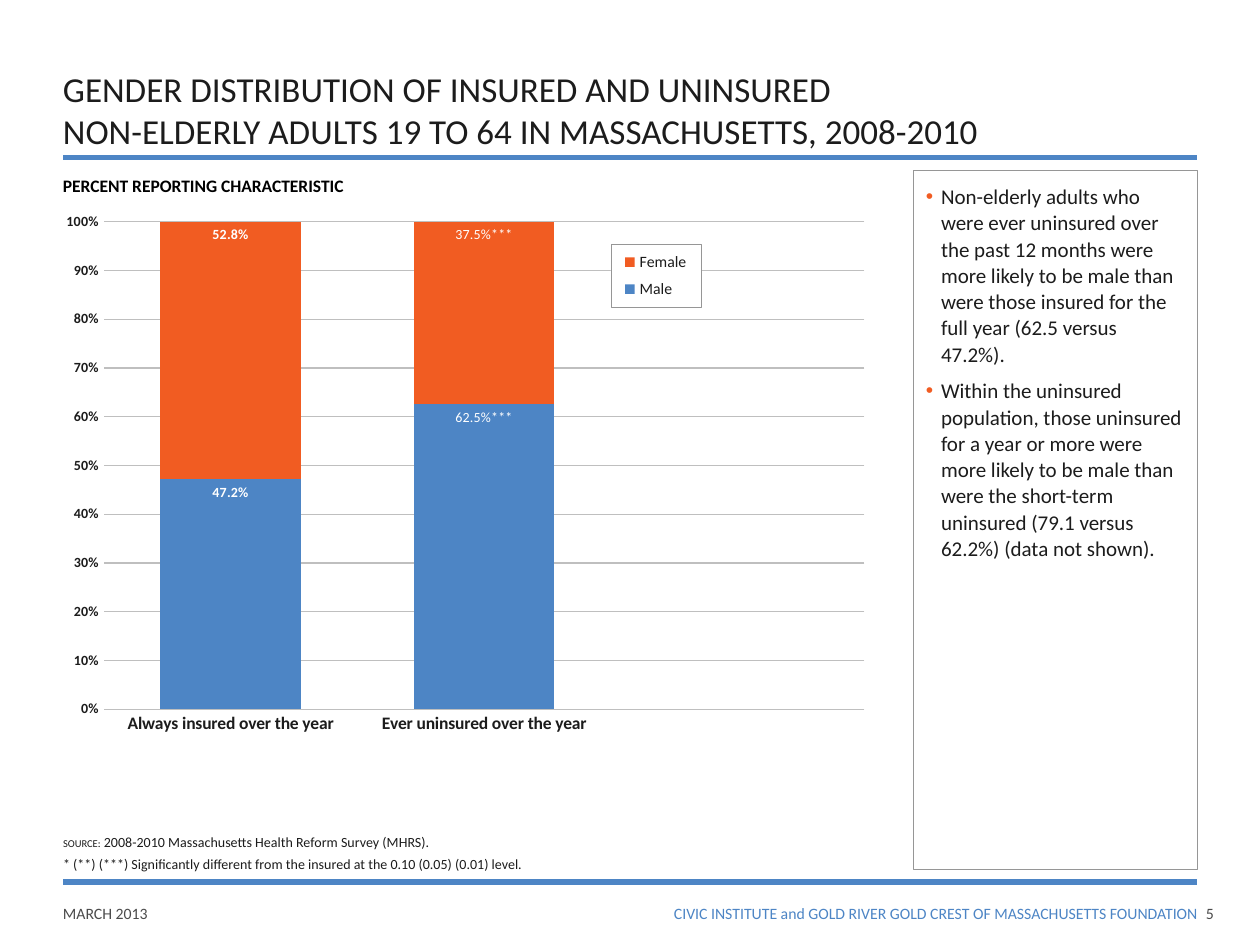
from lxml.etree import SubElement
from pptx import Presentation
from pptx.chart.data import CategoryChartData
from pptx.dml.color import RGBColor
from pptx.enum.chart import (XL_CHART_TYPE as ChartType, XL_LABEL_POSITION as LabelPosition,
                             XL_LEGEND_POSITION as LegendPosition, XL_TICK_MARK as TickMark)
from pptx.enum.shapes import MSO_CONNECTOR as Connector, MSO_SHAPE as Preset
from pptx.enum.text import MSO_ANCHOR as Anchor, PP_ALIGN as Align
from pptx.oxml import parse_xml
from pptx.oxml.ns import nsdecls, qn
from pptx.util import Pt

PX = 9144  # EMU per px, 100 px to the inch
FONT = "Calibri"
BLUE, ORANGE, INK, GREY, EDGE, GRID = "4D85C5", "F15C22", "1C1C1C", "4B4B4B", "969696", "BFBFBF"
BLACK, WHITE = "000000", "FFFFFF"

RULE_TOPS = [125, 700]
RULE_LEFT, RULE_RIGHT = 50, 950

# Each paragraph is a list of runs: (text, size, colour)
TEXTS = [
    dict(at=(50, 717, 100, 32), paras=[[("MARCH 2013", 9, GREY)]]),
    dict(at=(519, 717, 431, 32), align=Align.RIGHT,
         paras=[[("CIVIC INSTITUTE and GOLD RIVER GOLD CREST OF MASSACHUSETTS FOUNDATION", 9, BLUE)]]),
    dict(at=(957, 717, 43, 32), paras=[[("5", 9, GREY)]]),
    dict(at=(50, 38, 900, 87), margins=(0, 5, 0, 5), anchor=Anchor.BOTTOM,
         paras=[[("GENDER DISTRIBUTION OF INSURED AND UNINSURED\n"
                  "NON-ELDERLY ADULTS 19 TO 64 IN MASSACHUSETTS, 2008-2010", 20, INK)]]),
    dict(at=(50, 656, 648, 41), margins=(0, 5, 0, 5), anchor=Anchor.BOTTOM, before=3,
         paras=[[("SOURCE", 6, INK), (":", 6, BLACK), (" ", 8, BLACK),
                 ("2008-2010 Massachusetts Health Reform Survey (MHRS).", 8, INK)],
                [("* (**) (***) Significantly different from the insured at the "
                  "0.10 (0.05) (0.01) level.", 8, INK)]]),
    dict(at=(50, 134, 490, 27), margins=(0, 5, 0, 5), bold=True,
         paras=[[("PERCENT REPORTING CHARACTERISTIC", 10, BLACK)]]),
]

FINDINGS_AT = (725, 135, 225, 555)
FINDINGS = [
    "Non-elderly adults who were ever uninsured over the past 12 months were more likely "
    "to be male than were those insured for the full year (62.5 versus 47.2%).",
    "Within the uninsured population, those uninsured for a year or more were more likely "
    "to be male than were the short-term uninsured (79.1 versus 62.2%) (data not shown).",
]

CHART_AT = (50, 158, 649, 450)
CATEGORIES = ["Always insured over the year", "Ever uninsured over the year", ""]
# name, colour, values, label of the second bar
SERIES = [
    ("Male", BLUE, [0.472, 0.625, None], "62.5%***"),
    ("Female", ORANGE, [0.528, 0.375, None], "37.5%***"),
]
PLOT_LAYOUT = (0.05, 0.04, 0.93, 0.86)
LEGEND_LAYOUT = (0.67, 0.08, 0.11, 0.11)


def rgb(colour):
    return RGBColor.from_string(colour)


def scaled(at):
    return [value * PX for value in at]


def set_font(font, size, colour, bold=False):
    for name, value in dict(name=FONT, size=Pt(size), bold=bold).items():
        setattr(font, name, value)
    font.color.rgb = rgb(colour)


def set_frame(frame, margins, anchor=Anchor.TOP):
    frame.word_wrap = True
    frame.vertical_anchor = anchor
    for side, value in zip(("left", "top", "right", "bottom"), scaled(margins)):
        setattr(frame, f"margin_{side}", value)


def fill_frame(frame, paras, align=Align.LEFT, before=0, bold=False):
    for index, spans in enumerate(paras):
        para = frame.add_paragraph() if index else frame.paragraphs[0]
        para.alignment = align
        para.space_before = Pt(before)
        for text, size, colour in spans:
            for row, line in enumerate(text.split("\n")):
                if row:
                    para.add_line_break()
                span = para.add_run()
                span.text = line
                set_font(span.font, size, colour, bold)


def add_text(page, at, paras, margins=(0, 0, 0, 0), anchor=Anchor.TOP, **style):
    frame = page.shapes.add_textbox(*scaled(at)).text_frame
    set_frame(frame, margins, anchor)
    fill_frame(frame, paras, **style)


def add_rule(page, top):
    rule = page.shapes.add_connector(Connector.STRAIGHT, *scaled((RULE_LEFT, top, RULE_RIGHT, top)))
    rule.line.color.rgb = rgb(BLUE)
    rule.line.width = Pt(3)
    SubElement(rule._element.spPr, qn("a:effectLst"))


def add_findings(page):
    box = page.shapes.add_shape(Preset.RECTANGLE, *scaled(FINDINGS_AT))
    box.shadow.inherit = False
    box.fill.background()
    box.line.color.rgb = rgb(EDGE)
    box.line.width = Pt(0.25)
    set_frame(box.text_frame, (10, 10, 10, 5))
    fill_frame(box.text_frame, [[(text, 12, INK)] for text in FINDINGS], before=6)
    for para in box.text_frame.paragraphs:
        para.line_spacing = Pt(15)
        props = para._p.get_or_add_pPr()
        props.set("marL", str(12 * PX))
        props.set("indent", str(-12 * PX))
        colour = SubElement(props, qn("a:buClr"))
        SubElement(colour, qn("a:srgbClr"), val=ORANGE)
        SubElement(props, qn("a:buFont"), typeface="Arial")
        SubElement(props, qn("a:buChar"), char="•")


def make_layout(fractions, inner=False):
    """Return a manual c:layout for x, y, width and height as parts of the chart."""
    layout = parse_xml(f"<c:layout {nsdecls('c')}><c:manualLayout/></c:layout>")
    manual = layout[0]
    if inner:
        SubElement(manual, qn("c:layoutTarget"), val="inner")
    for tag in ("xMode", "yMode"):
        SubElement(manual, qn(f"c:{tag}"), val="edge")
    for tag, value in zip("xywh", fractions):
        SubElement(manual, qn(f"c:{tag}"), val=str(value))
    return layout


def drop_layout(element):
    for old in element.findall(qn("c:layout")):
        element.remove(old)


def format_axes(chart):
    category, value = chart.category_axis, chart.value_axis
    set_font(category.tick_labels.font, 10, INK, True)
    set_font(value.tick_labels.font, 8, INK, True)
    category.major_tick_mark = value.major_tick_mark = TickMark.NONE
    for axis in (category, value):
        axis.format.line.fill.background()
    for name, setting in dict(minimum_scale=0, maximum_scale=1, major_unit=0.1).items():
        setattr(value, name, setting)
    value.tick_labels.number_format = "0%"
    value.tick_labels.number_format_is_linked = False
    grid = value.major_gridlines.format.line
    grid.color.rgb = rgb(GRID)
    grid.width = Pt(0.75)


def format_series(series, colour, custom_label):
    series.format.fill.solid()
    series.format.fill.fore_color.rgb = rgb(colour)
    labels = series.data_labels
    for name, value in dict(show_value=True, number_format="0.0%", number_format_is_linked=False,
                            position=LabelPosition.INSIDE_END).items():
        setattr(labels, name, value)
    set_font(labels.font, 8, WHITE, True)
    label = series.points[1].data_label
    fill_frame(label.text_frame, [[(custom_label, 8, WHITE)]], align=Align.CENTER)
    label.position = LabelPosition.INSIDE_END


def format_legend(chart):
    chart.has_legend = True
    legend = chart.legend
    legend.position = LegendPosition.RIGHT
    legend.include_in_layout = False
    set_font(legend.font, 9, INK)
    element = legend._element
    drop_layout(element)
    element.find(qn("c:legendPos")).addnext(make_layout(LEGEND_LAYOUT))
    element.find(qn("c:overlay")).addnext(parse_xml(
        f'<c:spPr {nsdecls("c", "a")}><a:solidFill><a:srgbClr val="{WHITE}"/></a:solidFill>'
        f'<a:ln w="3175"><a:solidFill><a:srgbClr val="{EDGE}"/></a:solidFill></a:ln></c:spPr>'))


def add_gender_chart(page):
    data = CategoryChartData()
    data.categories = CATEGORIES
    for name, _, values, _ in SERIES:
        data.add_series(name, values)
    chart = page.shapes.add_chart(ChartType.COLUMN_STACKED, *scaled(CHART_AT), data).chart
    chart.has_title = False
    set_font(chart.font, 8, INK, True)
    plot = chart.plots[0]
    for name, value in dict(gap_width=80, overlap=100, vary_by_categories=False).items():
        setattr(plot, name, value)
    format_axes(chart)
    for series, (_, colour, _, custom_label) in zip(plot.series, SERIES):
        format_series(series, colour, custom_label)
    format_legend(chart)
    area = chart._chartSpace.chart.plotArea
    drop_layout(area)
    area.insert(0, make_layout(PLOT_LAYOUT, inner=True))


def main():
    deck = Presentation()
    deck.slide_width, deck.slide_height = scaled((1000, 750))
    page = deck.slides.add_slide(deck.slide_layouts[6])
    for top in RULE_TOPS:
        add_rule(page, top)
    for text in TEXTS:
        add_text(page, **text)
    add_findings(page)
    add_gender_chart(page)
    deck.save("out.pptx")


if __name__ == "__main__":
    main()
